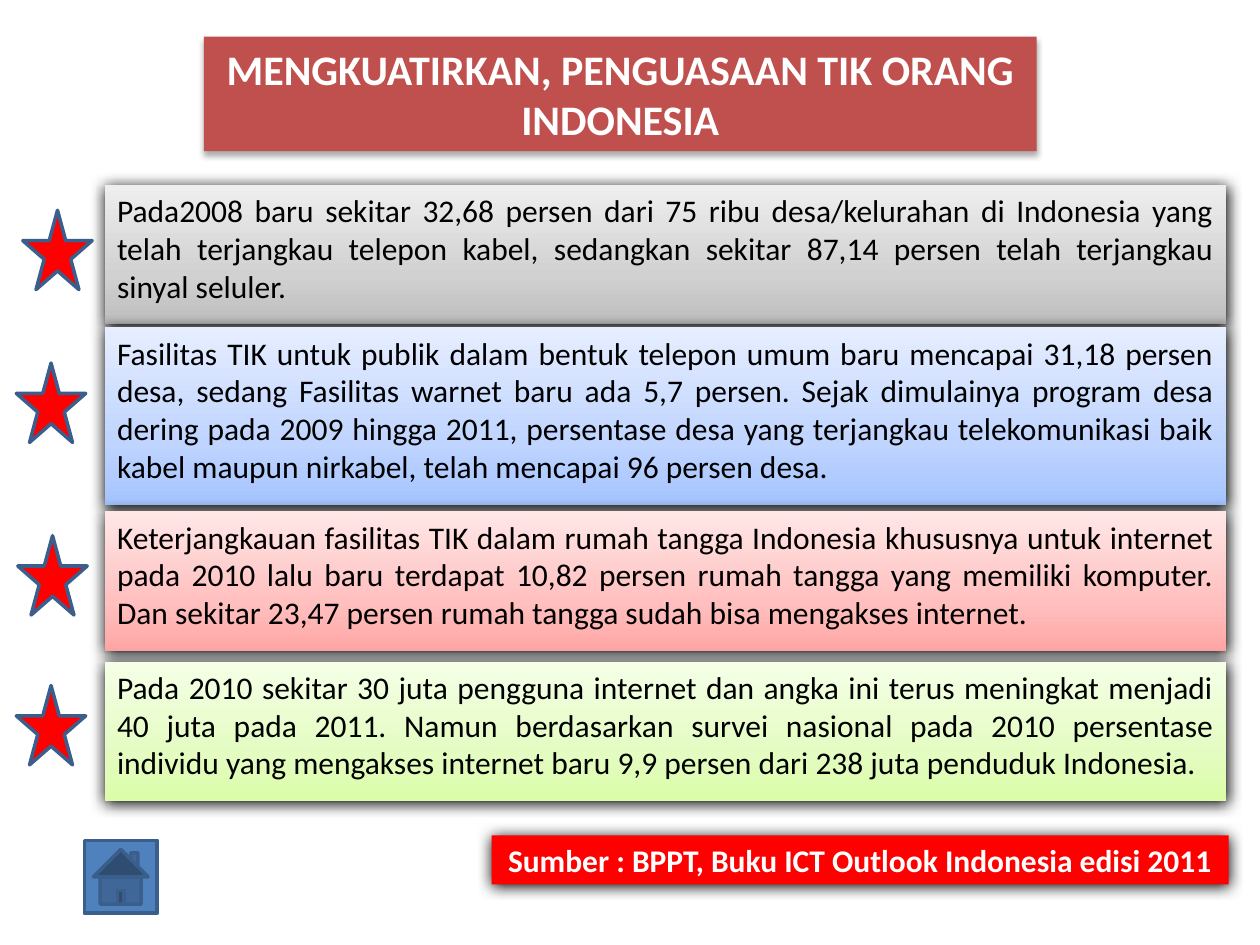
from copy import deepcopy

from lxml import etree
from pptx import Presentation
from pptx.dml.color import RGBColor
from pptx.enum.shapes import MSO_SHAPE
from pptx.enum.text import MSO_ANCHOR, MSO_AUTO_SIZE, PP_ALIGN
from pptx.oxml.ns import qn
from pptx.util import Cm, Pt

RECT, STAR, HOME = MSO_SHAPE.RECTANGLE, MSO_SHAPE.STAR_5_POINT, MSO_SHAPE.ACTION_BUTTON_HOME
CENTER, JUSTIFY = PP_ALIGN.CENTER, PP_ALIGN.JUSTIFY
TOP, MIDDLE = MSO_ANCHOR.TOP, MSO_ANCHOR.MIDDLE

TITLE = "MENGKUATIRKAN, PENGUASAAN TIK ORANG INDONESIA"
SOURCE = "Sumber : BPPT, Buku ICT Outlook Indonesia edisi 2011"
FACTS = [
    {"text": "Pada2008 baru sekitar 32,68 persen dari 75 ribu desa/kelurahan di Indonesia yang "
             "telah terjangkau telepon kabel, sedangkan sekitar 87,14 persen telah terjangkau "
             "sinyal seluler.",
     "top": 3.73, "lines": 3, "star": (0.46, 4.24), "grad": ("BDBDBD", "D1D1D1", "EEEEEE")},
    {"text": "Fasilitas TIK untuk publik dalam bentuk telepon umum baru mencapai 31,18 persen "
             "desa, sedang Fasilitas warnet baru ada 5,7 persen. Sejak dimulainya program desa "
             "dering pada 2009 hingga 2011, persentase desa yang terjangkau telekomunikasi baik "
             "kabel maupun nirkabel, telah mencapai 96 persen desa.",
     "top": 6.6, "lines": 4, "star": (0.33, 7.32), "grad": ("A4C4FF", "BFD4FF", "E6EEFF")},
    {"text": "Keterjangkauan fasilitas TIK dalam rumah tangga Indonesia khususnya untuk internet "
             "pada 2010 lalu baru terdapat 10,82 persen rumah tangga yang memiliki komputer. "
             "Dan sekitar 23,47 persen rumah tangga sudah bisa mengakses internet.",
     "top": 10.31, "lines": 3, "star": (0.36, 10.8), "grad": ("FFA6A5", "FFC0BF", "FFE7E7")},
    {"text": "Pada 2010 sekitar 30 juta pengguna internet dan angka ini terus meningkat menjadi "
             "40 juta pada 2011. Namun berdasarkan survei nasional pada 2010 persentase "
             "individu yang mengakses internet baru 9,9 persen dari 238 juta penduduk Indonesia.",
     "top": 13.34, "lines": 3, "star": (0.33, 13.82), "grad": ("DAFDA7", "E4FCC2", "F5FFE7")},
]

THEME = {
    "font": "Calibri", "title_size": 24, "body_size": 18,
    "text": "000000", "light": "FFFFFF", "title": "C0504D", "source": "FF0000",
    "star": "FF0000", "home": "4F81BD", "outline": "3A5F8C",
    "soft": {"alpha": 32, "blur": 3.5, "dist": 2.2},
    "strong": {"alpha": 100, "blur": 8.5, "dist": 1},
}
STOPS = (0, 0.35, 1)
BOX_LEFT, BOX_WIDTH = 2.11, 22.61
BOX_PAD, LINE_HEIGHT = 0.25, 0.77


def rgb(name):
    return RGBColor.from_string(THEME.get(name, name))


def place(s, left, top, width, height):
    s.left, s.top, s.width, s.height = Cm(left), Cm(top), Cm(width), Cm(height)


def paint(s, color):
    s.fill.solid()
    s.fill.fore_color.rgb = rgb(color)


def paint_gradient(s, colors):
    s.fill.gradient()
    s.fill.gradient_angle = 90
    stops = s._element.spPr.find(".//" + qn("a:gsLst"))
    stops.append(deepcopy(stops[0]))
    for stop, position, color in zip(s.fill.gradient_stops, STOPS, colors):
        stop.position = position
        stop.color.rgb = rgb(color)


def add_shadow(s, kind):
    s.line.fill.background()
    s.shadow.inherit = False
    look = THEME[kind]
    effects = s._element.spPr.find(qn("a:effectLst"))
    shadow = etree.SubElement(effects, qn("a:outerShdw"), blurRad=str(Pt(look["blur"])),
                              dist=str(Pt(look["dist"])), dir="5400000", rotWithShape="0")
    color = etree.SubElement(shadow, qn("a:srgbClr"), val="000000")
    etree.SubElement(color, qn("a:alpha"), val=str(look["alpha"] * 1000))


def write(s, text, size, color, align, anchor, bold=False):
    tf = s.text_frame
    tf.word_wrap = True
    tf.auto_size = MSO_AUTO_SIZE.NONE
    tf.vertical_anchor = anchor
    p = tf.paragraphs[0]
    p.text = text
    p.alignment = align
    p.font.name = THEME["font"]
    p.font.size = Pt(THEME[size])
    p.font.bold = bold
    p.font.color.rgb = rgb(color)


def add_box(slide, left, top, width, height):
    s = slide.shapes.add_shape(RECT, 0, 0, 0, 0)
    place(s, left, top, width, height)
    add_shadow(s, "strong")
    return s


def add_icon(slide, kind, left, top, width, height, color):
    s = slide.shapes.add_shape(kind, 0, 0, 0, 0)
    place(s, left, top, width, height)
    paint(s, color)
    s.line.color.rgb = rgb("outline")
    s.line.width = Pt(2)
    s.shadow.inherit = False


def main():
    prs = Presentation()
    prs.slide_width, prs.slide_height = Cm(25.4), Cm(19.05)
    slide = prs.slides.add_slide(prs.slide_layouts[5])

    title = slide.shapes.title
    place(title, 4.11, 0.74, 16.79, 2.31)
    paint(title, "title")
    add_shadow(title, "soft")
    write(title, TITLE, "title_size", "light", CENTER, TOP, bold=True)

    for fact in FACTS:
        height = 2 * BOX_PAD + LINE_HEIGHT * fact["lines"]
        s = add_box(slide, BOX_LEFT, fact["top"], BOX_WIDTH, height)
        paint_gradient(s, fact["grad"])
        write(s, fact["text"], "body_size", "text", JUSTIFY, TOP)
        add_icon(slide, STAR, *fact["star"], 1.4, 1.6, "star")

    s = add_box(slide, 9.91, 16.84, 14.86, 0.99)
    paint(s, "source")
    write(s, SOURCE, "body_size", "light", CENTER, MIDDLE, bold=True)
    add_icon(slide, HOME, 1.7, 16.94, 1.47, 1.47, "home")

    prs.save("out.pptx")


if __name__ == "__main__":
    main()
